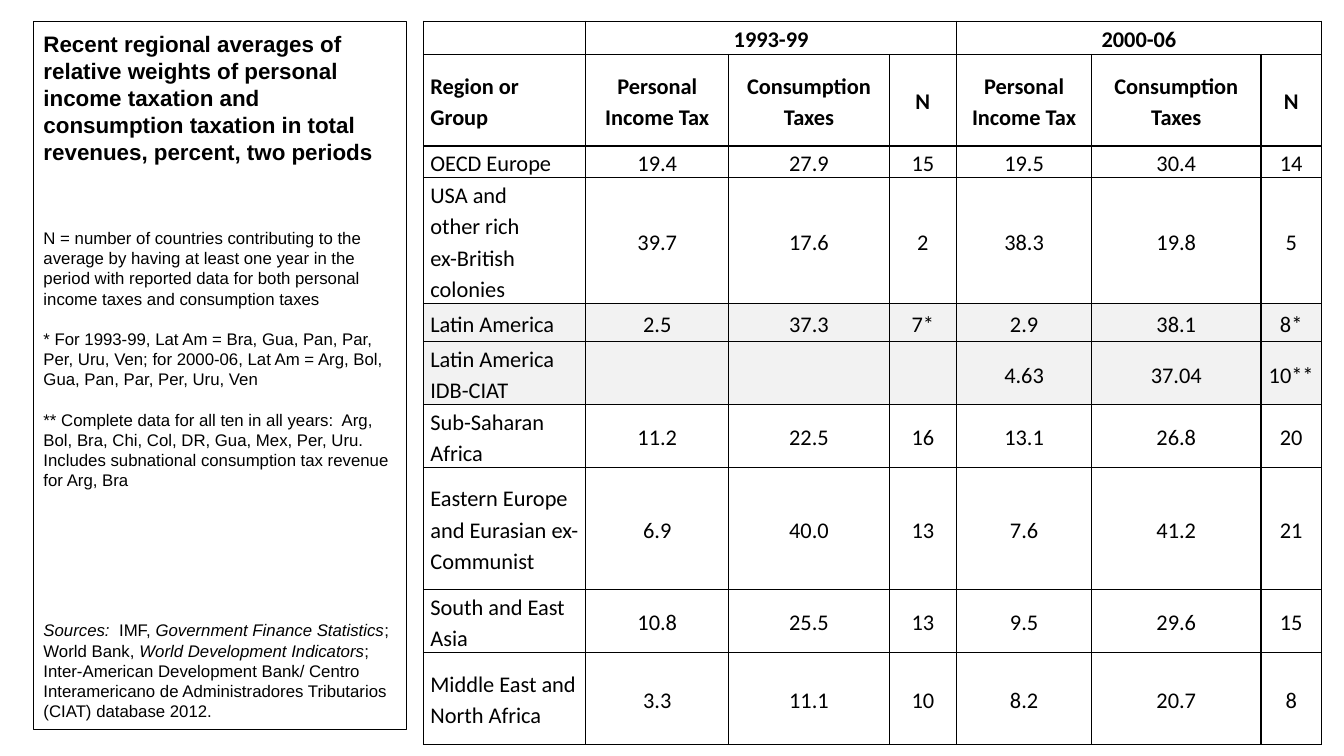
from dataclasses import dataclass

from lxml import etree
from pptx import Presentation, util as u
from pptx.dml import color
from pptx.enum import shapes, text
from pptx.oxml import ns


@dataclass(frozen=True)
class Theme:
    ink: color.RGBColor = color.RGBColor(0, 0, 0)
    paper: color.RGBColor = color.RGBColor(255, 255, 255)
    highlight: color.RGBColor = color.RGBColor(0xF2, 0xF2, 0xF2)
    panel_font: str = "Arial"
    table_font: str = "Calibri"
    title_size: int = 16
    note_size: int = 12
    table_size: int = 16
    panel_line: float = 0.75
    table_line: int = 1


class SlideBuilder:
    """Places elements by percentages of the slide's width and height."""

    def __init__(self, deck, theme):
        self.deck, self.theme = deck, theme
        self.slide = deck.slides.add_slide(deck.slide_layouts[6])

    def x(self, percent):
        return round(self.deck.slide_width * percent / 100)

    def y(self, percent):
        return round(self.deck.slide_height * percent / 100)

    def frame(self, left, top, width, height):
        return self.x(left), self.y(top), self.x(width), self.y(height)

    def style(self, run, font, size, bold=False, italic=False):
        run.font.name, run.font.size = font, u.Pt(size)
        run.font.bold, run.font.italic = bold, italic
        run.font.color.rgb = self.theme.ink

    def panel(self, box, title, notes):
        """Outlined panel; each note is (space before, [(words, italic), ...])."""
        theme = self.theme
        panel = self.slide.shapes.add_shape(shapes.MSO_SHAPE.RECTANGLE, *self.frame(*box))
        panel.shadow.inherit = False
        panel.fill.background()
        panel.line.color.rgb = theme.ink
        panel.line.width = u.Pt(theme.panel_line)
        body = panel.text_frame
        body.word_wrap = True
        body.vertical_anchor = text.MSO_ANCHOR.MIDDLE
        body.text = title
        heading = body.paragraphs[0]
        heading.alignment = text.PP_ALIGN.LEFT
        self.style(heading.runs[0], theme.panel_font, theme.title_size, bold=True)
        for gap, pieces in notes:
            note = body.add_paragraph()
            note.alignment = text.PP_ALIGN.LEFT
            note.space_before = u.Pt(gap)
            for words, italic in pieces:
                run = note.add_run()
                run.text = words
                self.style(run, theme.panel_font, theme.note_size, italic=italic)

    def border(self, cell):
        properties = cell._tc.get_or_add_tcPr()
        for side in ("lnL", "lnR", "lnT", "lnB"):
            line = etree.SubElement(properties, ns.qn(f"a:{side}"),
                                    w=str(u.Pt(self.theme.table_line)))
            fill = etree.SubElement(line, ns.qn("a:solidFill"))
            etree.SubElement(fill, ns.qn("a:srgbClr"), val=str(self.theme.ink))

    def cell(self, cell, words, bold, centred, fill):
        self.border(cell)
        cell.fill.solid()
        cell.fill.fore_color.rgb = fill
        cell.margin_left = cell.margin_right = u.Inches(0.07)
        cell.margin_top = cell.margin_bottom = 0
        cell.vertical_anchor = text.MSO_ANCHOR.MIDDLE
        if not words:
            return
        cell.text_frame.text = words
        for line in cell.text_frame.paragraphs:
            line.alignment = text.PP_ALIGN.CENTER if centred else text.PP_ALIGN.LEFT
            line.line_spacing = 1.15
            self.style(line.runs[0], self.theme.table_font, self.theme.table_size, bold)

    def table(self, left, top, widths, heights, rows, header_rows, highlighted, spans):
        box = self.frame(left, top, sum(widths), sum(heights))
        table = self.slide.shapes.add_table(len(rows), len(widths), *box).table
        table.first_row = table.horz_banding = False
        for column, width in zip(table.columns, widths):
            column.width = self.x(width)
        for row, height in zip(table.rows, heights):
            row.height = self.y(height)
        for r, row in enumerate(rows):
            fill = self.theme.highlight if r in highlighted else self.theme.paper
            for c, words in enumerate(row):
                self.cell(table.cell(r, c), words, r < header_rows, c > 0, fill)
        for r, first, last in spans:
            table.cell(r, first).merge(table.cell(r, last))


TITLE = ("Recent regional averages of relative weights of personal income taxation "
         "and consumption taxation in total revenues, percent, two periods")
NOTES = [
    (45, [("N = number of countries contributing to the average by having at least one "
           "year in the period with reported data for both personal income taxes and "
           "consumption taxes", False)]),
    (14.4, [("* For 1993-99, Lat Am = Bra, Gua, Pan, Par, Per, Uru, Ven; for 2000-06, "
             "Lat Am = Arg, Bol, Gua, Pan, Par, Per, Uru, Ven", False)]),
    (14.4, [("** Complete data for all ten in all years:  Arg, Bol, Bra, Chi, Col, DR, "
             "Gua, Mex, Per, Uru.  Includes subnational consumption tax revenue for "
             "Arg, Bra", False)]),
    (93, [("Sources:  ", True), ("IMF, ", False),
          ("Government Finance Statistics", True), ("; World Bank, ", False),
          ("World Development Indicators", True),
          ("; Inter-American Development Bank/ Centro Interamericano de "
           "Administradores Tributarios (CIAT) database 2012.", False)]),
]
MEASURES = ["Personal Income Tax", "Consumption Taxes", "N"]
TAX_ROWS = [
    ["", "1993-99", "", "", "2000-06", "", ""],
    ["Region or Group", *MEASURES, *MEASURES],
    ["OECD Europe", "19.4", "27.9", "15", "19.5", "30.4", "14"],
    ["USA and\nother rich\nex-British colonies", "39.7", "17.6", "2", "38.3", "19.8", "5"],
    ["Latin America", "2.5", "37.3", "7*", "2.9", "38.1", "8*"],
    ["Latin America IDB-CIAT", "", "", "", "4.63", "37.04", "10**"],
    ["Sub-Saharan Africa", "11.2", "22.5", "16", "13.1", "26.8", "20"],
    ["Eastern Europe and Eurasian ex-Communist", "6.9", "40.0", "13", "7.6", "41.2", "21"],
    ["South and East Asia", "10.8", "25.5", "13", "9.5", "29.6", "15"],
    ["Middle East and North Africa", "3.3", "11.1", "10", "8.2", "20.7", "8"],
]
COLUMN_WIDTHS = [12.08, 10.65, 11.93, 5.02, 10.05, 12.6, 4.5]
ROW_HEIGHTS = [4.4, 12.13, 4, 16.13, 5.07, 8, 8, 16.13, 8, 12.13]


def main():
    deck = Presentation()
    deck.slide_width, deck.slide_height = u.Inches(13.33), u.Inches(7.5)
    builder = SlideBuilder(deck, Theme())

    # Regional tax table, with one merged heading per period
    builder.table(31.5, 2.8, COLUMN_WIDTHS, ROW_HEIGHTS, TAX_ROWS, header_rows=2,
                  highlighted=(4, 5), spans=[(0, 1, 3), (0, 4, 6)])

    # Title, notes and sources
    builder.panel((2.5, 2.9, 27.75, 93.6), TITLE, NOTES)

    deck.save("out.pptx")


if __name__ == "__main__":
    main()
